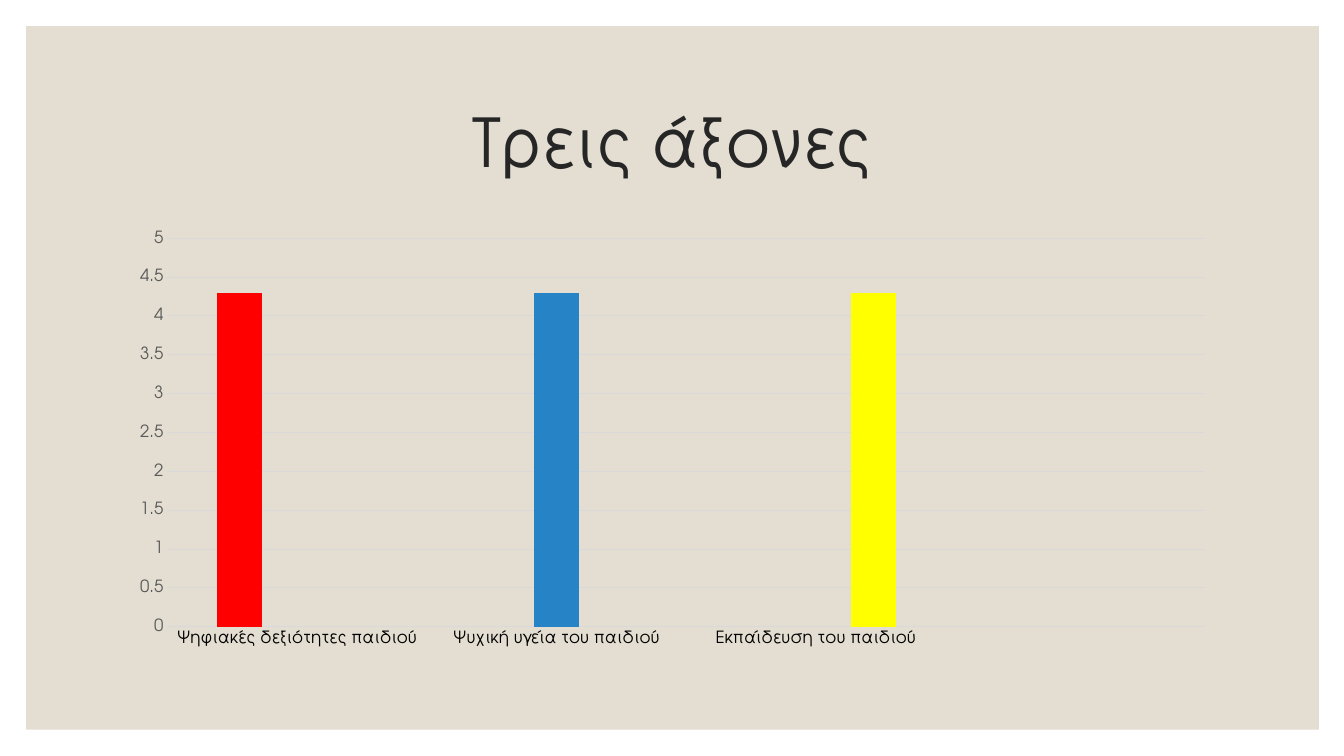
from dataclasses import dataclass

from pptx import Presentation
from pptx.chart.data import CategoryChartData
from pptx.dml.color import RGBColor
from pptx.enum.chart import XL_CHART_TYPE, XL_TICK_MARK
from pptx.enum.shapes import MSO_SHAPE
from pptx.enum.text import MSO_ANCHOR, PP_ALIGN
from pptx.util import Inches, Pt

COLUMNS = XL_CHART_TYPE.COLUMN_CLUSTERED
NO_TICK = XL_TICK_MARK.NONE
RECTANGLE = MSO_SHAPE.RECTANGLE
MIDDLE = MSO_ANCHOR.MIDDLE
CENTER = PP_ALIGN.CENTER
TITLE_ONLY = 5


@dataclass(frozen=True)
class Theme:
    font: str = "TeX Gyre Adventor"
    panel: str = "E3DED1"
    title: str = "262626"
    category_label: str = "000000"
    value_label: str = "595959"
    grid: str = "D9D9D9"
    title_size: int = 48
    chart_size: int = 10
    axis_size: int = 12
    grid_width: float = 0.75


AXES = [
    ("Ψηφιακές δεξιότητες παιδιού", "FF0000"),
    ("Ψυχική υγεία του παιδιού", "2683C6"),
    ("Εκπαίδευση του παιδιού", "FFFF00"),
]
SCORE = 4.3


class SlideBuilder:
    def __init__(self, slide, theme):
        self.slide = slide
        self.theme = theme

    def style_font(self, font, size, color):
        font.name = self.theme.font
        font.size = Pt(size)
        font.bold = False
        font.color.rgb = RGBColor.from_string(color)

    def style_line(self, line):
        line.color.rgb = RGBColor.from_string(self.theme.grid)
        line.width = Pt(self.theme.grid_width)

    def title(self, text, *frame):
        title = self.slide.shapes.title
        title.left, title.top, title.width, title.height = map(Inches, frame)
        title.text_frame.text = text
        title.text_frame.word_wrap = True
        title.text_frame.vertical_anchor = MIDDLE
        para = title.text_frame.paragraphs[0]
        para.alignment = CENTER
        para.line_spacing = 0.9
        self.style_font(para.font, self.theme.title_size, self.theme.title)

    def panel(self, *frame):
        """Add the backdrop behind the title."""
        panel = self.slide.shapes.add_shape(RECTANGLE, *map(Inches, frame))
        panel.shadow.inherit = False
        panel.fill.solid()
        panel.fill.fore_color.rgb = RGBColor.from_string(self.theme.panel)
        panel.line.fill.background()
        self.slide.shapes.title.element.addprevious(panel.element)

    def column_chart(self, columns, score, *frame):
        """Give each column its own series and leave one empty category last."""
        data = CategoryChartData()
        data.categories = [label for label, _ in columns] + [""]
        for index in range(len(columns)):
            values = [None] * (len(columns) + 1)
            values[index] = score
            data.add_series(f"Series {index + 1}", values)
        chart = self.slide.shapes.add_chart(COLUMNS, *map(Inches, frame), data).chart
        chart.has_title = False
        chart.has_legend = False
        self.style_font(chart.font, self.theme.chart_size, self.theme.category_label)

        plot = chart.plots[0]
        plot.vary_by_categories = False
        plot.gap_width = 219
        plot.overlap = -27
        for series, (_, color) in zip(plot.series, columns):
            series.invert_if_negative = False
            series.format.fill.solid()
            series.format.fill.fore_color.rgb = RGBColor.from_string(color)
        self.chart_axes(chart)

    def chart_axes(self, chart):
        category, value = chart.category_axis, chart.value_axis
        for axis, color in (
            (category, self.theme.category_label),
            (value, self.theme.value_label),
        ):
            axis.major_tick_mark = axis.minor_tick_mark = NO_TICK
            self.style_font(axis.tick_labels.font, self.theme.axis_size, color)
        self.style_line(category.format.line)
        value.format.line.fill.background()
        value.minimum_scale, value.maximum_scale = 0, 5
        value.major_unit = 0.5
        value.has_major_gridlines = True
        self.style_line(value.major_gridlines.format.line)


def main():
    deck = Presentation()
    deck.slide_width, deck.slide_height = Inches(13.33), Inches(7.5)
    slide = deck.slides.add_slide(deck.slide_layouts[TITLE_ONLY])
    page = SlideBuilder(slide, Theme())
    page.panel(0.26, 0.26, 12.82, 6.98)
    page.title("Τρεις άξονες", 1.17, 0.7, 11, 1.5)
    page.column_chart(AXES, SCORE, 1.17, 2.2, 11, 4.3)
    deck.save("out.pptx")


if __name__ == "__main__":
    main()
